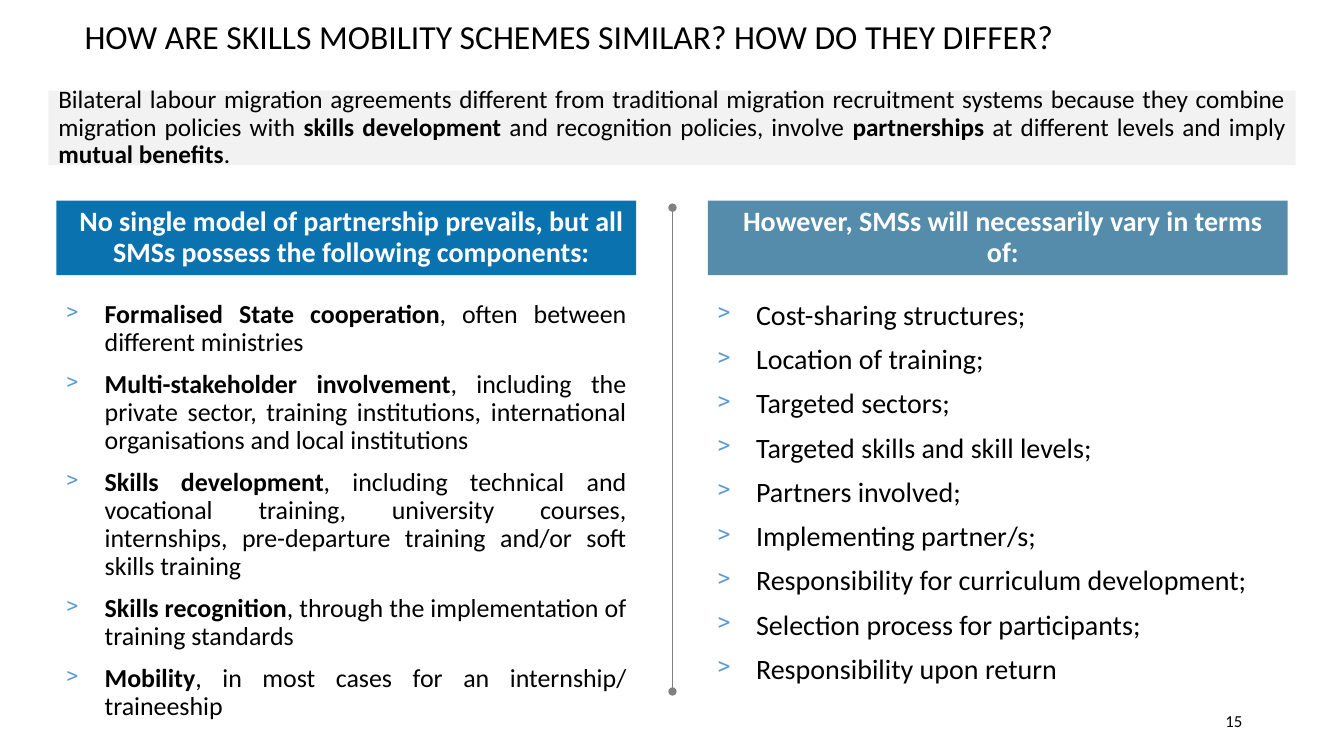
"""Build the slide on how skills mobility schemes are similar and how they differ."""
from lxml import etree
from pptx import Presentation
from pptx.dml.color import RGBColor
from pptx.enum import shapes, text
from pptx.oxml import ns
from pptx.util import Inches, Pt

BLACK = RGBColor(0x00, 0x00, 0x00)
WHITE = RGBColor(0xFF, 0xFF, 0xFF)
GREY = RGBColor(0x80, 0x80, 0x80)
PALE_GREY = RGBColor(0xF2, 0xF2, 0xF2)
BLUE = RGBColor(0x0B, 0x72, 0xB0)
STEEL_BLUE = RGBColor(0x55, 0x8C, 0xAC)
BULLET_BLUE = RGBColor(0x5B, 0x9B, 0xD5)
LEFT, CENTER, RIGHT, JUSTIFY = (
    text.PP_ALIGN.LEFT, text.PP_ALIGN.CENTER, text.PP_ALIGN.RIGHT, text.PP_ALIGN.JUSTIFY)
TOP, MIDDLE = text.MSO_ANCHOR.TOP, text.MSO_ANCHOR.MIDDLE

deck = Presentation()
deck.slide_width, deck.slide_height = Inches(13.33), Inches(7.5)
slide = deck.slides.add_slide(deck.slide_layouts[6])


def add_text(paragraphs, left, top, width, height, size=20, color=BLACK, fill=None,
             align=LEFT, anchor=TOP, inset=0.1, spacing=0.9, bullet=None):
    """Place paragraphs in a box; parts between ** marks are bold."""
    area = [Inches(length) for length in (left, top, width, height)]
    if fill is None:
        box = slide.shapes.add_textbox(*area)
    else:
        box = slide.shapes.add_shape(shapes.MSO_SHAPE.RECTANGLE, *area)
        box.shadow.inherit = False
        box.fill.solid()
        box.fill.fore_color.rgb = fill
        box.line.fill.background()
    frame = box.text_frame
    frame.word_wrap = True
    frame.vertical_anchor = anchor
    frame.margin_left = Inches(inset)
    for index, content in enumerate(paragraphs):
        paragraph = frame.paragraphs[0] if index == 0 else frame.add_paragraph()
        paragraph.alignment = align
        paragraph.line_spacing = spacing
        if index:
            paragraph.space_before = Pt(10)
        if bullet:
            properties = paragraph._p.get_or_add_pPr()
            properties.set("marL", str(Inches(0.38)))
            properties.set("indent", str(Inches(-0.38)))
            bullet_color = etree.SubElement(properties, ns.qn("a:buClr"))
            etree.SubElement(bullet_color, ns.qn("a:srgbClr"), val=str(BULLET_BLUE))
            etree.SubElement(properties, ns.qn("a:buSzPct"), val="80000")
            etree.SubElement(properties, ns.qn("a:buChar"), char=bullet)
        for position, part in enumerate(content.split("**")):
            if part:
                run = paragraph.add_run()
                run.text = part
                run.font.name = "Calibri"
                run.font.size = Pt(size)
                run.font.bold = position % 2 == 1
                run.font.color.rgb = color


divider = slide.shapes.add_connector(
    shapes.MSO_CONNECTOR.STRAIGHT, Inches(6.67), Inches(2.06), Inches(6.67), Inches(6.86))
divider.line.color.rgb = GREY
divider.line.width = Pt(0.5)
divider_line = divider.line._get_or_add_ln()
for end in ("a:headEnd", "a:tailEnd"):
    etree.SubElement(divider_line, ns.qn(end), type="oval")
etree.SubElement(divider._element.spPr, ns.qn("a:effectLst"))

add_text(["HOW ARE SKILLS MOBILITY SCHEMES SIMILAR? HOW DO THEY DIFFER?"],
         0.74, 0.15, 12.37, 0.46, size=24)
add_text(["Bilateral labour migration agreements different from traditional migration "
          "recruitment systems because they combine migration policies with "
          "**skills development** and recognition policies, involve **partnerships** "
          "at different levels and imply **mutual benefits**."],
         0.48, 0.9, 12.37, 0.74, size=18, fill=PALE_GREY, align=JUSTIFY, anchor=MIDDLE)

shared_components = [
    "**Formalised State cooperation**, often between different ministries",
    "**Multi-stakeholder involvement**, including the private sector, training "
    "institutions, international organisations and local institutions",
    "**Skills development**, including technical and vocational training, university "
    "courses, internships, pre-departure training and/or soft skills training",
    "**Skills recognition**, through the implementation of training standards",
    "**Mobility**, in most cases for an internship/ traineeship",
]
differences = [
    "Cost-sharing structures;",
    "Location of training;",
    "Targeted sectors;",
    "Targeted skills and skill levels;",
    "Partners involved;",
    "Implementing partner/s;",
    "Responsibility for curriculum development;",
    "Selection process for participants;",
    "Responsibility upon return",
]
columns = [
    (0.56, "No single model of partnership prevails, but all SMSs possess the following "
     "components:", BLUE, shared_components, 18.5, JUSTIFY),
    (7.02, "However, SMSs will necessarily vary in terms of:", STEEL_BLUE,
     differences, 20, LEFT),
]
for left, heading, heading_fill, points, point_size, point_align in columns:
    add_text([f"**{heading}**"], left, 1.99, 5.75, 0.74, color=WHITE, fill=heading_fill,
             align=CENTER, anchor=MIDDLE, inset=0.2)
    add_text(points, left, 2.94, 5.75, 4.36, size=point_size, align=point_align, bullet=">")

add_text(["15"], 9.42, 6.95, 3, 0.4, size=12, align=RIGHT, anchor=MIDDLE, spacing=1.0)

deck.save("out.pptx")
